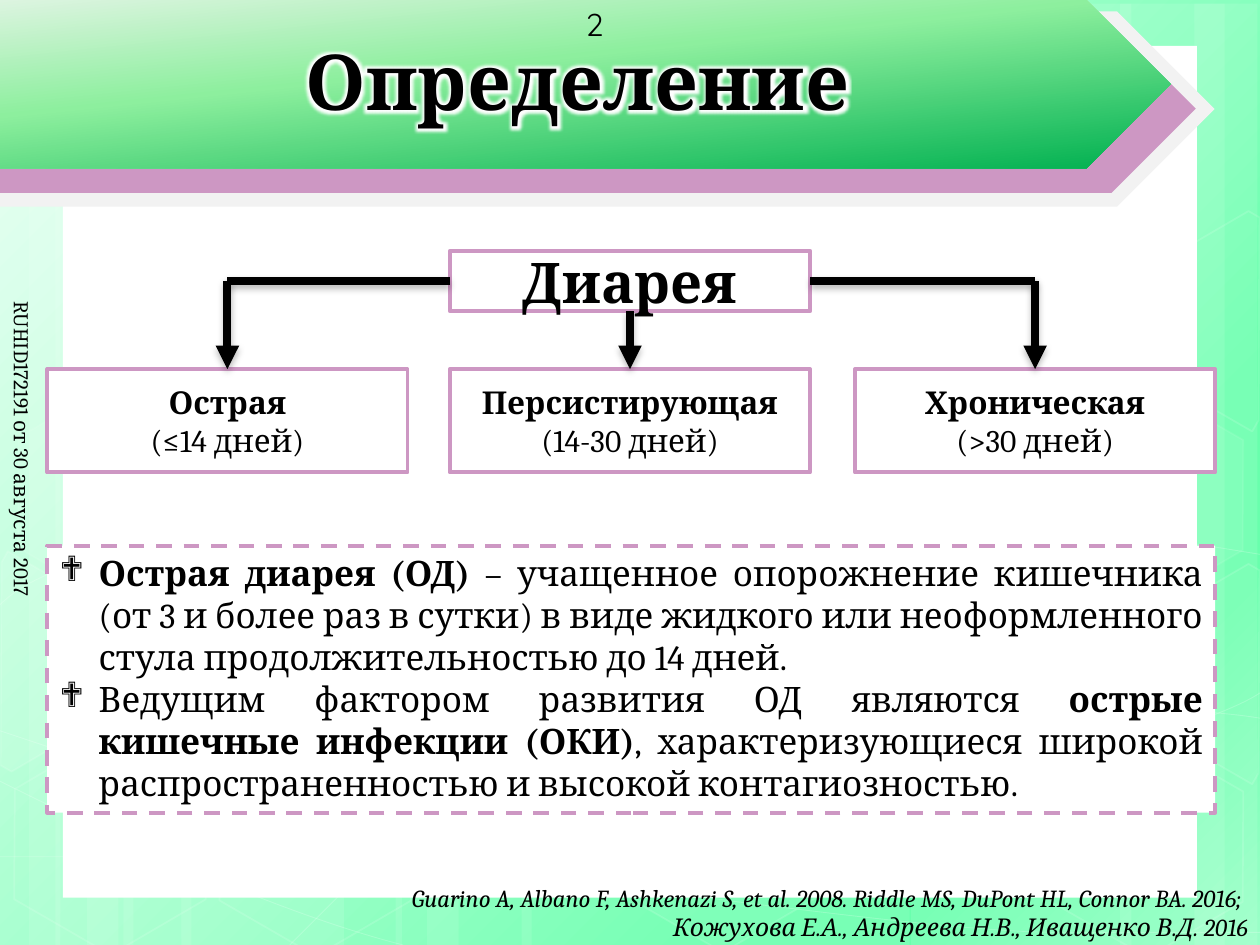
from math import cos, radians, sin

from lxml.etree import SubElement
from pptx import Presentation
from pptx.dml.color import RGBColor
from pptx.enum.dml import MSO_LINE
from pptx.enum.shapes import MSO_CONNECTOR, MSO_SHAPE
from pptx.enum.text import MSO_ANCHOR, PP_ALIGN
from pptx.oxml import parse_xml
from pptx.oxml.ns import nsdecls, qn
from pptx.util import Inches, Pt

COLORS = {"white": "FFFFFF", "black": "000000", "mauve": "CD97C3", "pale": "F2F2F2"}
CELL = Inches(0.1)  # the slide is a grid of 100 columns by 75 rows
COLS, ROWS = 100, 75


def paint(shape, fill=None, opacity=100, line=None, width=1, line_opacity=100):
    """Set fill and outline with opacity in percent; None means no paint."""
    shape.shadow.inherit = False
    for paint_format, color, share in (
        (shape.fill, fill, opacity),
        (shape.line.fill, line, line_opacity),
    ):
        if color is None:
            paint_format.background()
            continue
        paint_format.solid()
        paint_format.fore_color.rgb = RGBColor.from_string(COLORS[color])
        if share < 100:
            owner = shape._element.spPr
            if paint_format is not shape.fill:
                owner = owner.find(qn("a:ln"))
            srgb = owner.find(qn("a:solidFill"))[0]
            SubElement(srgb, qn("a:alpha"), val=str(share * 1000))
    if line:
        shape.line.width = Pt(width)


def write(frame, paragraphs, size, align, font="Cambria", italic=False):
    """Fill a text frame; each paragraph is a list of (text, bold) runs."""
    frame.word_wrap = True
    for index, runs in enumerate(paragraphs):
        paragraph = frame.add_paragraph() if index else frame.paragraphs[0]
        paragraph.alignment = align
        for text, bold in runs:
            run = paragraph.add_run()
            run.text = text
            run.font.size = Pt(size)
            run.font.name = font
            run.font.bold = bold
            run.font.italic = italic
            run.font.color.rgb = RGBColor.from_string(COLORS["black"])


prs = Presentation()
prs.slide_width, prs.slide_height = COLS * CELL, ROWS * CELL
slide = prs.slides.add_slide(prs.slide_layouts[6])
shapes = slide.shapes

# Backdrop: translucent bands, thin curves, hexagons
bands = [(9.8, 17.5), (-0.2, 5), (2.3, 8.3), (14.4, 17.5), (4.4, 5), (6.9, 8.3),
         (72.3, 17.5), (94.8, 5), (88.9, 8.3), (41.4, 30.8), (31.4, 5), (33.9, 8.3)]
for left, width in bands:
    band = shapes.add_shape(MSO_SHAPE.RECTANGLE, int(left * CELL), int(0.3 * CELL),
                            int(width * CELL), ROWS * CELL)
    paint(band, "white", 10)

# Each curve is a start point, then two controls and an end point per segment
curves = [
    [(-0.4, 67.6), (5, 67.9), (10.4, 68.2), (17.9, 68.1), (25.4, 68), (34.7, 67.8),
     (44.7, 66.8), (54.7, 65.8), (68.9, 63.9), (78.1, 62), (87.2, 60.1),
     (96.6, 57.1), (99.6, 55.4)],
    [(-0.4, 48), (2.5, 46.5), (5.4, 44.9), (11.1, 43.4), (16.7, 41.9), (24.8, 39.8),
     (33.6, 39), (42.5, 38.3), (53.3, 38.2), (64.3, 39), (75.3, 39.8),
     (93.6, 42.9), (99.6, 43.7)],
    [(-0.5, 62), (11.6, 67.5), (23.6, 73), (32.4, 75.3)],
    [(-0.4, 58.1), (2.8, 59.2), (5.9, 60.3), (11.7, 61.9), (17.5, 63.5), (26.2, 65.9),
     (34.6, 67.6), (42.9, 69.3), (53.4, 71.1), (61.7, 72.1), (70, 73.2),
     (78.9, 73.6), (84.2, 74), (89.5, 74.3), (93.4, 74.1), (99.6, 73.7)],
    [(23.1, 75.3), (24.9, 73.3), (26.7, 71.2), (29.1, 69.4), (31.5, 67.6),
     (34.9, 65.6), (37.7, 64.2), (40.5, 62.8), (42.2, 62.2), (45.9, 61.2),
     (49.5, 60.2), (56.2, 58.8), (59.8, 58.1), (63.3, 57.4), (70, 56.7),
     (78.3, 56.6), (81.8, 56.4), (94.2, 56.5), (99.5, 56.9)],
]
for curve in curves:
    builder = shapes.build_freeform(*curve[0], scale=CELL)
    builder.add_line_segments(curve[1:], close=False)
    thread = builder.convert_to_shape()
    paint(thread, line="white", width=0.5, line_opacity=20)
    outline = next(thread._element.iter(qn("a:path")))
    legs = outline.findall(qn("a:lnTo"))
    for first in range(0, len(legs), 3):
        bezier = SubElement(outline, qn("a:cubicBezTo"))
        for leg in legs[first:first + 3]:
            bezier.append(leg[0])
            outline.remove(leg)

TILT = 30
hexagons = [(32.3, 3.9, 4, 8), (48.6, 59.2, 6, 12), (0, 59.4, 0, 12), (0.3, 31.5, 7, 8),
            (16.3, 59.5, 0, 12), (82.3, 59.6, 0, 12), (82.3, 31.7, 7, 8)]
for left, top, opacity, line_opacity in hexagons:
    hexagon = shapes.add_shape(MSO_SHAPE.HEXAGON, int(left * CELL), int(top * CELL),
                               int(17.5 * CELL), int(15.2 * CELL))
    hexagon.adjustments[0] = 0.285
    hexagon.rotation = TILT
    paint(hexagon, "white" if opacity else None, opacity, "white", 1, line_opacity)

# Hexagons cut by the slide edge: center, corners as seen, opacity
cut_hexagons = [
    ((2.5, 53.9), [(-0.3, 44.8), (0.8, 44.1), (8.5, 48.6), (8.4, 57.3), (0.9, 61.7),
                   (-0.2, 61.1)], 10),
    ((97.4, 52.3), [(91.5, 48.9), (99.1, 44.5), (99.8, 44.9), (99.8, 61.6), (99.1, 62),
                    (91.5, 57.6)], 4),
    ((97.4, 24.4), [(91.5, 21), (99.1, 16.6), (99.9, 17.1), (99.8, 33.8), (99.1, 34.2),
                    (91.5, 29.8)], 0),
]
cosine, sine = cos(radians(TILT)), sin(radians(TILT))
for (mid_x, mid_y), corners, opacity in cut_hexagons:
    upright = [(mid_x + cosine * (x - mid_x) + sine * (y - mid_y),
                mid_y - sine * (x - mid_x) + cosine * (y - mid_y)) for x, y in corners]
    builder = shapes.build_freeform(*upright[0], scale=CELL)
    builder.add_line_segments(upright[1:])
    cut_hexagon = builder.convert_to_shape()
    cut_hexagon.rotation = TILT
    paint(cut_hexagon, "white" if opacity else None, opacity, "white", 1, 12)

panel = shapes.add_shape(MSO_SHAPE.RECTANGLE, 5 * CELL, int(3.65 * CELL),
                         90 * CELL, int(67.6 * CELL))
paint(panel, "white")

# Header: three stacked pentagons, the front one with a gradient
for top, width, height, color in [(0.9, 96.4, 15.5, "pale"), (1.95, 94.9, 13.35, "mauve"),
                                  (0, 92.9, 13.35, "white")]:
    header = shapes.add_shape(MSO_SHAPE.PENTAGON, 0, int(top * CELL),
                              int(width * CELL), int(height * CELL))
    paint(header, color)

slide.background.fill.solid()
backdrop = slide._element.cSld.find(qn("p:bg")).find(qn("p:bgPr"))
gradients = [
    (backdrop, 45, [(0, "EEFFF6"), (74, "69FFAD"), (83, "69FFAD"), (100, "9BFFC8")]),
    (header._element.spPr, 84, [(0, "DCF4E0"), (40, "8DEF9E"), (100, "00B050")]),
]
for properties, angle, stops in gradients:
    stop_list = "".join(f'<a:gs pos="{pos * 1000}"><a:srgbClr val="{color}"/></a:gs>'
                        for pos, color in stops)
    gradient = parse_xml(f'<a:gradFill {nsdecls("a")} rotWithShape="1">'
                         f'<a:gsLst>{stop_list}</a:gsLst>'
                         f'<a:lin ang="{angle * 60000}" scaled="0"/></a:gradFill>')
    properties.replace(properties.find(qn("a:solidFill")), gradient)

# Free-standing texts
texts = [
    ((0.05, 69.55, 100, 5.7), 14, PP_ALIGN.RIGHT, "Cambria", False, True, 0,
     ["Guarino A, Albano F, Ashkenazi S, et al. 2008. Riddle MS, DuPont HL, Connor BA. 2016; ",
      "Кожухова Е.А., Андреева Н.В., Иващенко В.Д. 2016"]),
    ((45.5, -0.1, 14.6, 4), 18, PP_ALIGN.LEFT, "Quicksand", False, False, 0, ["2"]),
    ((-23, 46.2, 49.5, 3), 12, PP_ALIGN.LEFT, "Cambria", False, False, 90,
     ["RUHID172191 от 30 августа 2017"]),
    ((2.45, 2.15, 86.8, 8.4), 44, PP_ALIGN.CENTER, "Cambria", True, False, 0, ["Определение"]),
]
for place, size, align, font, bold, italic, angle, lines in texts:
    caption = shapes.add_textbox(*(int(length * CELL) for length in place))
    caption.rotation = angle
    write(caption.text_frame, [[(line, bold)] for line in lines], size, align, font, italic)

title_run = caption.text_frame.paragraphs[0].runs[0]
title_run._r.get_or_add_rPr().find(qn("a:solidFill")).addnext(parse_xml(
    f'<a:effectLst {nsdecls("a")}><a:glow rad="{Pt(8)}">'
    f'<a:srgbClr val="{COLORS["white"]}"/></a:glow></a:effectLst>'))

# Classification tree: a root and its three kinds
BOX_WIDTH, KIND_TOP = 28.6, 29.3
root_left = (COLS - BOX_WIDTH) / 2
tree = [
    (root_left, 19.9, 4.8, 32, [[("Диарея", True)]]),
    (3.75, KIND_TOP, 8.2, 18, [[("Острая", True)], [("(≤14 дней)", False)]]),
    (root_left, KIND_TOP, 8.2, 18, [[("Персистирующая", True)], [("(14-30 дней)", False)]]),
    (67.85, KIND_TOP, 8.2, 18, [[("Хроническая", True)], [("(>30 дней)", False)]]),
]
boxes = []
for left, top, height, size, lines in tree:
    box = shapes.add_shape(MSO_SHAPE.RECTANGLE, int(left * CELL), int(top * CELL),
                           int(BOX_WIDTH * CELL), int(height * CELL))
    paint(box, "white", line="mauve", width=2.25)
    box.text_frame.vertical_anchor = MSO_ANCHOR.MIDDLE
    write(box.text_frame, lines, size, PP_ALIGN.CENTER)
    boxes.append(box)
root, acute, persistent, chronic = boxes

# Definitions
definition = shapes.add_shape(MSO_SHAPE.RECTANGLE, int(3.75 * CELL), int(43.3 * CELL),
                              int(92.7 * CELL), int(21.2 * CELL))
paint(definition, "white", line="mauve", width=2.25)
definition.line.dash_style = MSO_LINE.DASH
definition.text_frame.vertical_anchor = MSO_ANCHOR.TOP
write(definition.text_frame, [
    [("Острая диарея (ОД) ", True),
     ("– учащенное опорожнение кишечника (от 3 и более раз в сутки) в виде жидкого или "
      "неоформленного стула продолжительностью до 14 дней.", False)],
    [("Ведущим фактором развития ОД являются ", False),
     ("острые кишечные инфекции (ОКИ)", True),
     (", характеризующиеся широкой распространенностью и высокой контагиозностью. ", False)],
], 20, PP_ALIGN.JUSTIFY)
for paragraph in definition.text_frame.paragraphs:
    indent = paragraph._p.get_or_add_pPr()
    indent.set("marL", str(Inches(0.31)))
    indent.set("indent", str(-Inches(0.31)))
    SubElement(indent, qn("a:buFont"), typeface="Wingdings", charset="2")
    SubElement(indent, qn("a:buChar"), char="❖")

# Branches: side arms from the root, arrows down to each kind
root_middle = root.top + root.height // 2
branches = [(root, 1, None, acute), (root, 3, None, chronic), (None, 0, acute, acute),
            (None, 0, chronic, chronic), (root, 2, persistent, persistent)]
for source, side, target, column in branches:
    center = column.left + column.width // 2
    branch = shapes.add_connector(MSO_CONNECTOR.STRAIGHT, center, root_middle,
                                  center, root_middle)
    if source:
        branch.begin_connect(source, side)
    if target:
        branch.end_connect(target, 0)
    branch.line.width = Pt(4.5)
    branch.line.color.rgb = RGBColor.from_string(COLORS["black"])
    if target:
        SubElement(branch.line._get_or_add_ln(), qn("a:tailEnd"), type="triangle")
    branch._element.spPr.append(parse_xml(
        f'<a:effectLst {nsdecls("a")}><a:outerShdw blurRad="{Pt(4)}" dist="{Pt(2)}" '
        f'dir="5400000" rotWithShape="0"><a:srgbClr val="{COLORS["black"]}">'
        f'<a:alpha val="28000"/></a:srgbClr></a:outerShdw></a:effectLst>'))

prs.save("out.pptx")
